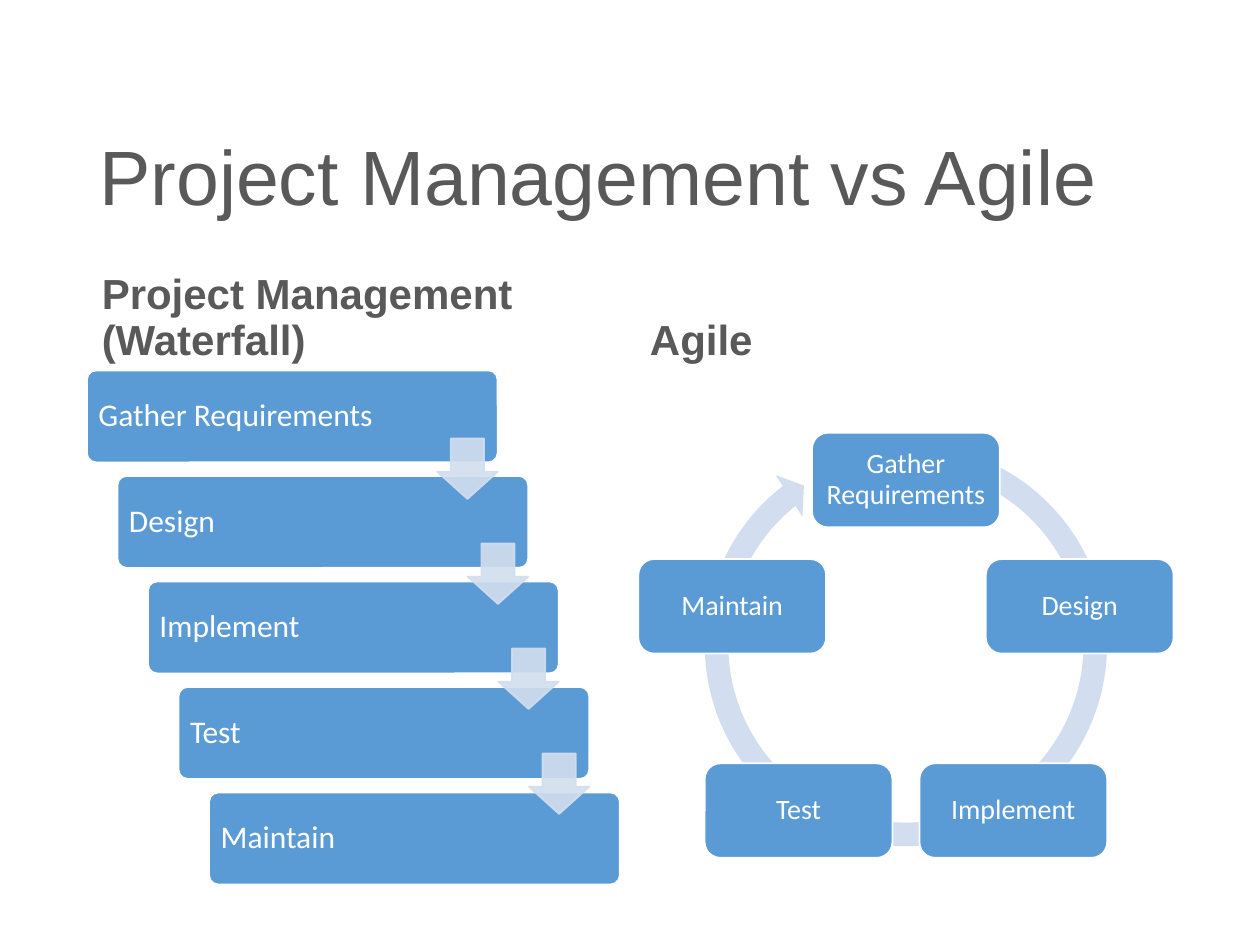
from dataclasses import dataclass
from math import cos, pi, sin

from lxml.etree import SubElement
from pptx import Presentation
from pptx.dml.color import RGBColor
from pptx.enum.shapes import MSO_SHAPE
from pptx.enum.text import MSO_ANCHOR, PP_ALIGN
from pptx.oxml.ns import qn
from pptx.util import Inches, Pt


@dataclass(frozen=True)
class Theme:
    """Colours, fonts and type sizes of the slide."""

    heading_color: RGBColor = RGBColor.from_string("595959")
    box_color: RGBColor = RGBColor.from_string("5B9BD5")
    arrow_color: RGBColor = RGBColor.from_string("D2DEEF")
    white: RGBColor = RGBColor.from_string("FFFFFF")
    heading_font: str = "Arial"
    box_font: str = "Calibri"
    title_size: int = 44
    heading_size: int = 24
    step_size: int = 18
    cycle_size: int = 16


THEME = Theme()
STAGES = ["Gather Requirements", "Design", "Implement", "Test", "Maintain"]


def write_text(shape, text, font_name, size, color, anchor, alignment=PP_ALIGN.LEFT, bold=False):
    """Put one formatted paragraph into a shape."""
    frame = shape.text_frame
    frame.text = text
    frame.word_wrap = True
    frame.vertical_anchor = anchor
    paragraph = frame.paragraphs[0]
    paragraph.alignment = alignment
    paragraph.line_spacing = 0.9
    font = paragraph.runs[0].font
    font.name, font.size, font.bold = font_name, Pt(size), bold
    font.color.rgb = color


def add_heading(slide, text, box, size, anchor, bold=False):
    """Add a grey heading in a text box."""
    shape = slide.shapes.add_textbox(*map(Inches, box))
    write_text(shape, text, THEME.heading_font, size, THEME.heading_color, anchor, bold=bold)


def add_filled_shape(group, kind, box, color, adjustments=()):
    """Add a flat preset shape to a group."""
    shape = group.shapes.add_shape(kind, *map(Inches, box))
    shape.shadow.inherit = False
    shape.fill.solid()
    shape.fill.fore_color.rgb = color
    for index, value in enumerate(adjustments):
        shape.adjustments[index] = value
    return shape


def add_stage_box(group, text, box, size, alignment, adjustments=()):
    """Add a rounded box that names one stage."""
    shape = add_filled_shape(group, MSO_SHAPE.ROUNDED_RECTANGLE, box, THEME.box_color, adjustments)
    shape.line.color.rgb = THEME.white
    shape.line.width = Pt(1)
    frame = shape.text_frame
    frame.margin_left = frame.margin_right = Inches(0.07)
    frame.margin_top = frame.margin_bottom = Inches(0.07)
    write_text(shape, text, THEME.box_font, size, THEME.white, MSO_ANCHOR.MIDDLE, alignment)


def add_step_arrow(group, box):
    """Add a slightly transparent arrow between two steps."""
    shape = add_filled_shape(group, MSO_SHAPE.DOWN_ARROW, box, THEME.arrow_color, (0.55, 0.45))
    shape.line.color.rgb = THEME.arrow_color
    shape.line.width = Pt(1)
    for color in shape.element.spPr.iter(qn("a:srgbClr")):
        SubElement(color, qn("a:alpha"), val="90000")


def add_waterfall(slide):
    """Add the staircase of stages with its arrows."""
    group = slide.shapes.add_group_shape()
    left, top, width, height = 0.69, 2.94, 3.26, 0.73
    step_x, step_y = 0.97 / 4, 3.35 / 4
    for index, stage in enumerate(STAGES):
        box = (left + index * step_x, top + index * step_y, width, height)
        add_stage_box(group, stage, box, THEME.step_size, PP_ALIGN.LEFT, (0.1,))
    arrow = 0.48
    for index in range(len(STAGES) - 1):
        arrow_left = left + width - arrow + index * step_x
        add_step_arrow(group, (arrow_left, 3.48 + index * 2.5 / 3, arrow, arrow))


def add_cycle(slide):
    """Add the ring of stages over its circular arrow."""
    group = slide.shapes.add_group_shape()
    ring = add_filled_shape(group, MSO_SHAPE.CIRCULAR_ARROW, (5.49, 3.42, 3.4, 3.4),
                            THEME.arrow_color, (0.055, 3.307, 139.145, 173.022, 0.058))
    ring.line.fill.background()
    center_x, center_y, radius = 7.19, 5.26, 1.45
    width, height = 1.49, 0.75
    for index, stage in enumerate(STAGES):
        angle = 2 * pi * index / len(STAGES)
        left = center_x + radius * sin(angle) - width / 2
        top = center_y - radius * cos(angle) - height / 2
        add_stage_box(group, stage, (left, top, width, height), THEME.cycle_size, PP_ALIGN.CENTER)


def main():
    """Build and save the slide."""
    presentation = Presentation()
    presentation.slide_width, presentation.slide_height = Inches(10), Inches(7.5)
    slide = presentation.slides.add_slide(presentation.slide_layouts[6])
    add_heading(slide, "Project Management vs Agile", (0.69, 0.89, 8.62, 1.08),
                THEME.title_size, MSO_ANCHOR.MIDDLE)
    add_heading(slide, "Project Management (Waterfall)", (0.71, 1.97, 4.23, 0.97),
                THEME.heading_size, MSO_ANCHOR.BOTTOM, bold=True)
    add_waterfall(slide)
    add_heading(slide, "Agile", (5.06, 1.97, 4.25, 0.97),
                THEME.heading_size, MSO_ANCHOR.BOTTOM, bold=True)
    add_cycle(slide)
    presentation.save("out.pptx")


if __name__ == "__main__":
    main()
